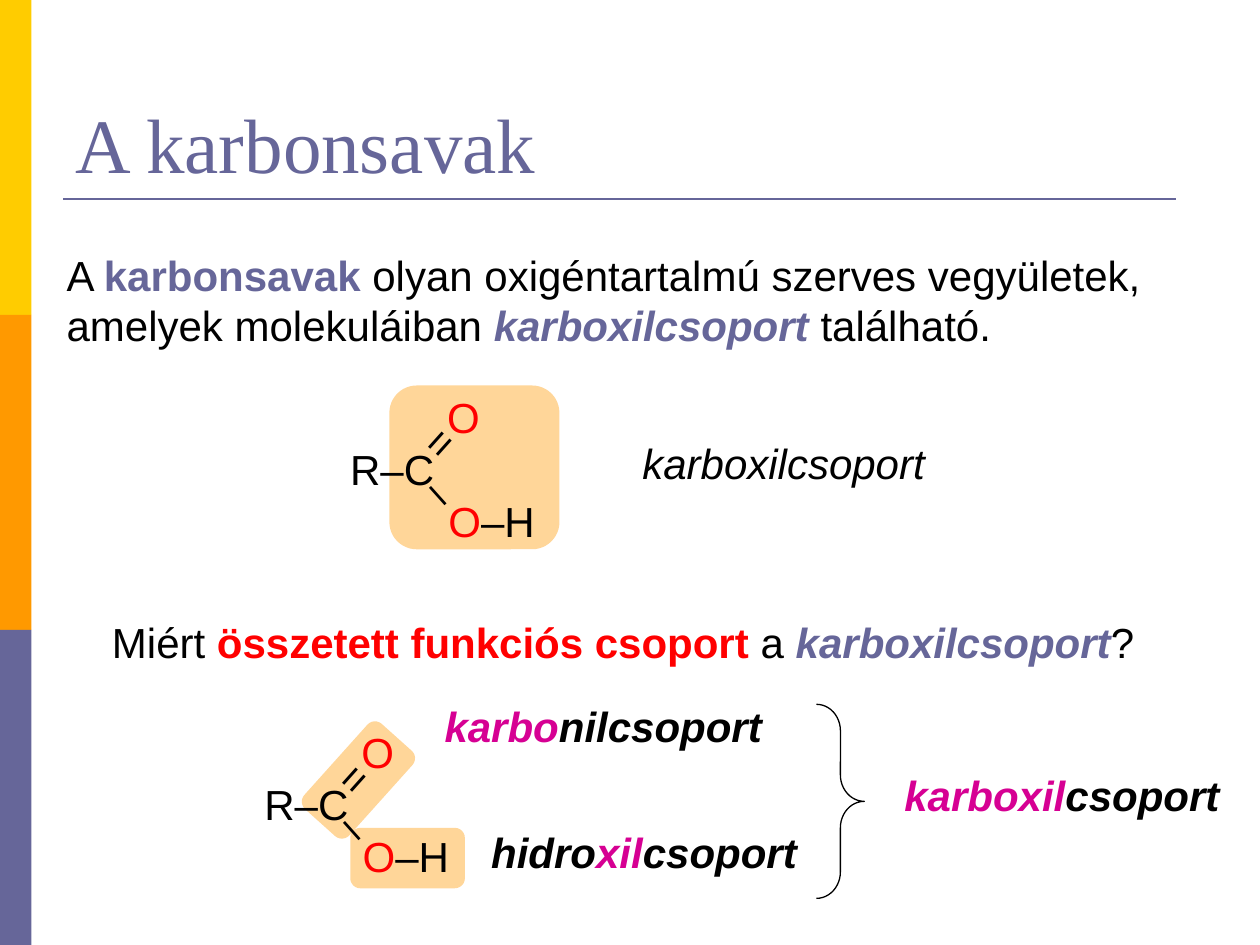
from pptx import Presentation
from pptx import util as u
from pptx.dml.color import RGBColor
from pptx.enum import shapes, text

COLORS = {
    "yellow": "FFCC00", "orange": "FF9900", "violet": "666699",
    "peach": "FFD699", "red": "FF0000", "magenta": "D60093", "black": "000000",
}
SHAPE = shapes.MSO_SHAPE


def rgb(name):
    return RGBColor.from_string(COLORS[name])


def inches(*lengths):
    return [u.Inches(length) for length in lengths]


def write(frame, runs, font="Arial", size=24, anchor=text.MSO_ANCHOR.TOP, wrap=False):
    """Fill a text frame with (wording, colour, style) runs; style holds b and/or i."""
    frame.word_wrap = wrap
    frame.vertical_anchor = anchor
    paragraph = frame.paragraphs[0]
    paragraph.alignment = text.PP_ALIGN.LEFT
    for wording, color, style in runs:
        run = paragraph.add_run()
        run.text = wording
        run.font.name, run.font.size = font, u.Pt(size)
        run.font.color.rgb = rgb(color)
        run.font.bold, run.font.italic = "b" in style, "i" in style


def add_label(parent, left, top, width, runs, height=0.5, rotation=0, **text_format):
    label = parent.add_textbox(*inches(left, top, width, height))
    label.rotation = rotation
    write(label.text_frame, runs, **text_format)
    label.text_frame.auto_size = text.MSO_AUTO_SIZE.SHAPE_TO_FIT_TEXT


def add_block(parent, kind, left, top, width, height, color, rotation=0):
    block = parent.add_shape(kind, *inches(left, top, width, height))
    block.shadow.inherit = False
    block.fill.solid()
    block.fill.fore_color.rgb = rgb(color)
    block.line.fill.background()
    block.rotation = rotation


def add_rule(parent, left, right, y):
    rule = parent.add_connector(shapes.MSO_CONNECTOR.STRAIGHT, *inches(left, y, right, y))
    rule.line.color.rgb = rgb("violet")
    rule.line.width = u.Pt(1.5)
    rule._element.spPr.get_or_add_effectLst()if hasattr(
        rule._element.spPr, "get_or_add_effectLst") else None


def add_brace(parent, left, top, width, height):
    brace = parent.add_shape(SHAPE.RIGHT_BRACE, *inches(left, top, width, height))
    brace.shadow.inherit = False
    brace.fill.background()
    brace.line.color.rgb = rgb("black")
    brace.line.width = u.Pt(0.75)
    brace.adjustments[0] = 0.553
    brace.adjustments[1] = 0.5


def add_carboxylic_acid(parent, left, top, highlight=False):
    """Draw R–C(=O)–O–H as one group, optionally on a highlighted field."""
    molecule = parent.add_group_shape().shapes
    if highlight:
        add_block(molecule, SHAPE.ROUNDED_RECTANGLE, left + 0.41, top, 1.35, 1.3, "peach")
    atoms_and_bonds = [
        (0, 0.41, 0.88, 0, [("R–C", "black", "")]),
        (0.6, 0.2, 0.4, 311.8, [("=", "black", "")]),
        (0.77, 0, 0.46, 0, [("O", "red", "")]),
        (0.78, 0.82, 0.89, 0, [("O", "red", ""), ("–H", "black", "")]),
        (0.64, 0.6, 0.39, 48.2, [("–", "black", "")]),
    ]
    for dx, dy, width, rotation, runs in atoms_and_bonds:
        add_label(molecule, left + dx, top + dy, width, runs, rotation=rotation)


def main():
    prs = Presentation()
    prs.slide_width, prs.slide_height = inches(10, 7.5)
    slide = prs.slides.add_slide(prs.slide_layouts[5])
    parts = slide.shapes

    # Side bands and title rule
    for row, color in enumerate(("yellow", "orange", "violet")):
        add_block(parts, SHAPE.RECTANGLE, 0, row * 2.5, 0.25, 2.5, color)
    add_rule(parts, 0.5, 9.33, 1.58)

    # Title
    title = parts.title
    title.left, title.top, title.width, title.height = inches(0.5, 0.3, 9, 1.25)
    write(title.text_frame, [("A karbonsavak", "violet", "")], font="Times New Roman",
          size=44, anchor=text.MSO_ANCHOR.BOTTOM, wrap=True)

    # Definition
    add_label(parts, 0.43, 1.93, 9.12, [
        ("A ", "black", ""), ("karbonsavak ", "violet", "b"),
        ("olyan oxigéntartalmú szerves vegyületek, amelyek molekuláiban ", "black", ""),
        ("karboxilcsoport", "violet", "bi"), (" található.", "black", ""),
    ], height=0.91, wrap=True)

    # Carboxyl group as a whole
    add_label(parts, 5, 3.42, 2.47, [("karboxilcsoport", "black", "i")])
    add_carboxylic_acid(parts, 2.68, 3.06, highlight=True)

    # Question
    add_label(parts, 0.79, 4.84, 8.39, [
        ("Miért ", "black", ""), ("összetett funkciós csoport", "red", "b"),
        (" a ", "black", ""), ("karboxilcsoport", "violet", "bi"), ("?", "black", ""),
    ])

    # Carbonyl and hydroxyl parts of the group
    add_block(parts, SHAPE.ROUNDED_RECTANGLE, 2.39, 5.95, 0.91, 0.48, "peach", rotation=311.9)
    add_block(parts, SHAPE.ROUNDED_RECTANGLE, 2.78, 6.57, 0.91, 0.48, "peach")
    add_carboxylic_acid(parts, 2, 5.72)

    # Names of the parts, joined by the brace
    add_label(parts, 3.43, 5.51, 2.74,
              [("karbo", "magenta", "bi"), ("nilcsoport", "black", "bi")])
    add_label(parts, 3.8, 6.51, 2.65,
              [("hidro", "black", "bi"), ("xil", "magenta", "bi"), ("csoport", "black", "bi")])
    add_brace(parts, 6.48, 5.59, 0.38, 1.54)
    add_label(parts, 7.08, 6.06, 2.73,
              [("karboxil", "magenta", "bi"), ("csoport", "black", "bi")])

    prs.save("out.pptx")


if __name__ == "__main__":
    main()
